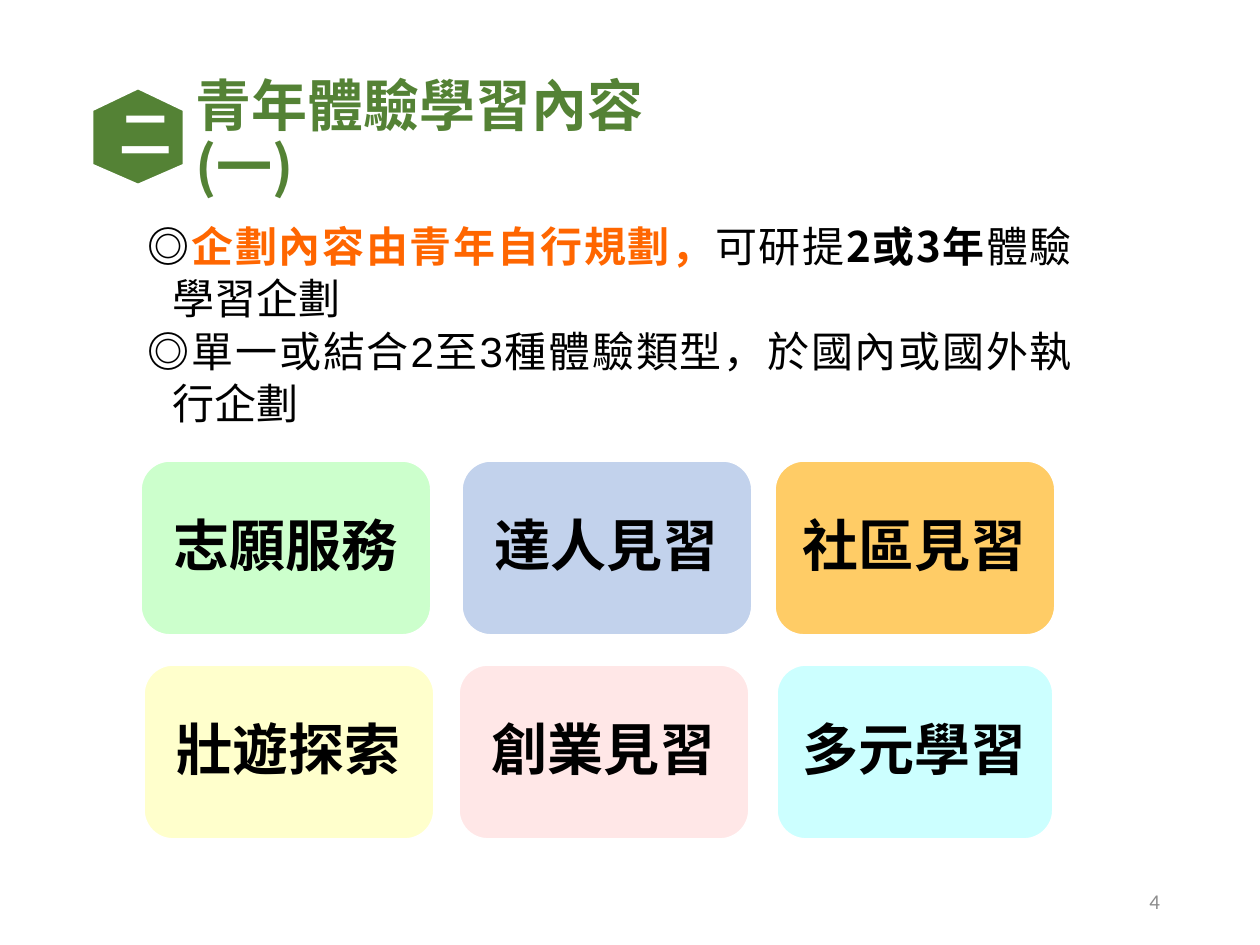
"""Build the slide on the content of the youth experiential learning programme."""
from lxml.etree import SubElement
from pptx import Presentation
from pptx.dml.color import RGBColor
from pptx.enum.shapes import MSO_SHAPE
from pptx.enum.text import MSO_ANCHOR, MSO_AUTO_SIZE, PP_ALIGN
from pptx.oxml.ns import qn
from pptx.util import Pt

PX = 914400 / 126
SANS, LATIN, NUMBER = "Noto Sans CJK SC", "Arial", "Calibri"
COLORS = {
    "green": "548235", "orange": "FF6600", "black": "000000", "white": "FFFFFF",
    "gray": "8C8C8C", "mint": "CCFFCC", "blue": "C2D2EC", "amber": "FFCC66",
    "yellow": "FFFFCC", "pink": "FFE7E7", "cyan": "CCFFFF",
}
TITLE = "青年體驗學習內容(一)"
SECTION = "二"
PAGE_NUMBER = "4"
POINTS = [
    [("◎", SANS, "black", True),
     ("企劃內容", SANS, "orange", True),
     ("由", LATIN, "orange", True),
     ("青年自行規劃，", SANS, "orange", True),
     ("可研提", SANS, "black", False),
     ("2或3年", SANS, "black", True),
     ("體驗學習企劃", SANS, "black", False)],
    [("◎", SANS, "black", True),
     ("單一", SANS, "black", False),
     ("或結合2至3種體驗類型，於國內或國外執行企劃", LATIN, "black", False)],
]
CARD_HEIGHT = 174
CARD_ROWS = [
    (461, [("志願服務", "mint", 141, 290), ("達人見習", "blue", 462, 290),
           ("社區見習", "amber", 775, 280)]),
    (665, [("壯遊探索", "yellow", 144, 290), ("創業見習", "pink", 459, 290),
           ("多元學習", "cyan", 777, 276)]),
]
HEXAGON = [(138, 88), (184, 110), (184, 165), (138, 185), (92, 165), (92, 110)]


def px(value):
    return round(value * PX)


def color(name):
    return RGBColor.from_string(COLORS[name])


def add_span(para, text, size, font, tint, bold=True):
    span = para.add_run()
    span.text = text
    span.font.size = Pt(size)
    span.font.bold = bold
    span.font.color.rgb = color(tint)
    span.font.name = font
    east_asian = SubElement(span.font._element, qn("a:ea"))
    east_asian.set("typeface", SANS)


def set_frame(shape, across, down, anchor=MSO_ANCHOR.MIDDLE):
    frame = shape.text_frame
    frame.word_wrap = True
    frame.auto_size = MSO_AUTO_SIZE.NONE
    frame.vertical_anchor = anchor
    frame.margin_left = frame.margin_right = px(across)
    frame.margin_top = frame.margin_bottom = px(down)
    return frame


def write_line(shape, margins, text, size, font, tint, align, bold=True, spacing=0.9):
    para = set_frame(shape, *margins).paragraphs[0]
    para.alignment = align
    para.line_spacing = spacing
    add_span(para, text, size, font, tint, bold)


def paint(shape, fill, width):
    shape.shadow.inherit = False
    shape.fill.solid()
    shape.fill.fore_color.rgb = color(fill)
    shape.line.color.rgb = color("white")
    shape.line.width = Pt(width)


def add_heading(page):
    title = page.shapes.title
    title.left, title.top, title.width, title.height = map(px, (189, 95, 543, 88))
    write_line(title, (6, 6), TITLE, 32, SANS, "green", PP_ALIGN.LEFT)
    builder = page.shapes.build_freeform(*HEXAGON[0], scale=PX)
    builder.add_line_segments(HEXAGON[1:], close=True)
    badge = builder.convert_to_shape()
    paint(badge, "green", 1.5)
    write_line(badge, (28, 30), SECTION, 30, SANS, "white", PP_ALIGN.CENTER)


def add_points(page):
    box = page.shapes.add_textbox(*map(px, (139, 213, 942, 222)))
    frame = set_frame(box, 9, 5, MSO_ANCHOR.TOP)
    for index, spans in enumerate(POINTS):
        para = frame.add_paragraph() if index else frame.paragraphs[0]
        para.alignment = PP_ALIGN.JUSTIFY
        para.line_spacing = Pt(30)
        properties = para._p.get_or_add_pPr()
        properties.set("marL", str(px(25)))
        properties.set("indent", str(px(-25)))
        for text, font, tint, bold in spans:
            add_span(para, text, 24, font, tint, bold)


def add_cards(page):
    for top, cards in CARD_ROWS:
        for text, fill, left, width in cards:
            card = page.shapes.add_shape(
                MSO_SHAPE.ROUNDED_RECTANGLE, *map(px, (left, top, width, CARD_HEIGHT)))
            paint(card, fill, 1)
            write_line(card, (16, 16), text, 32, SANS, "black", PP_ALIGN.CENTER)


def add_page_number(page):
    box = page.shapes.add_textbox(*map(px, (890, 876, 283, 50)))
    write_line(box, (13, 6), PAGE_NUMBER, 12, NUMBER, "gray", PP_ALIGN.RIGHT,
               bold=False, spacing=1.0)


def main():
    deck = Presentation()
    deck.slide_width, deck.slide_height = px(1260), px(945)
    page = deck.slides.add_slide(deck.slide_layouts[5])
    add_heading(page)
    add_points(page)
    add_cards(page)
    add_page_number(page)
    deck.save("out.pptx")


if __name__ == "__main__":
    main()
